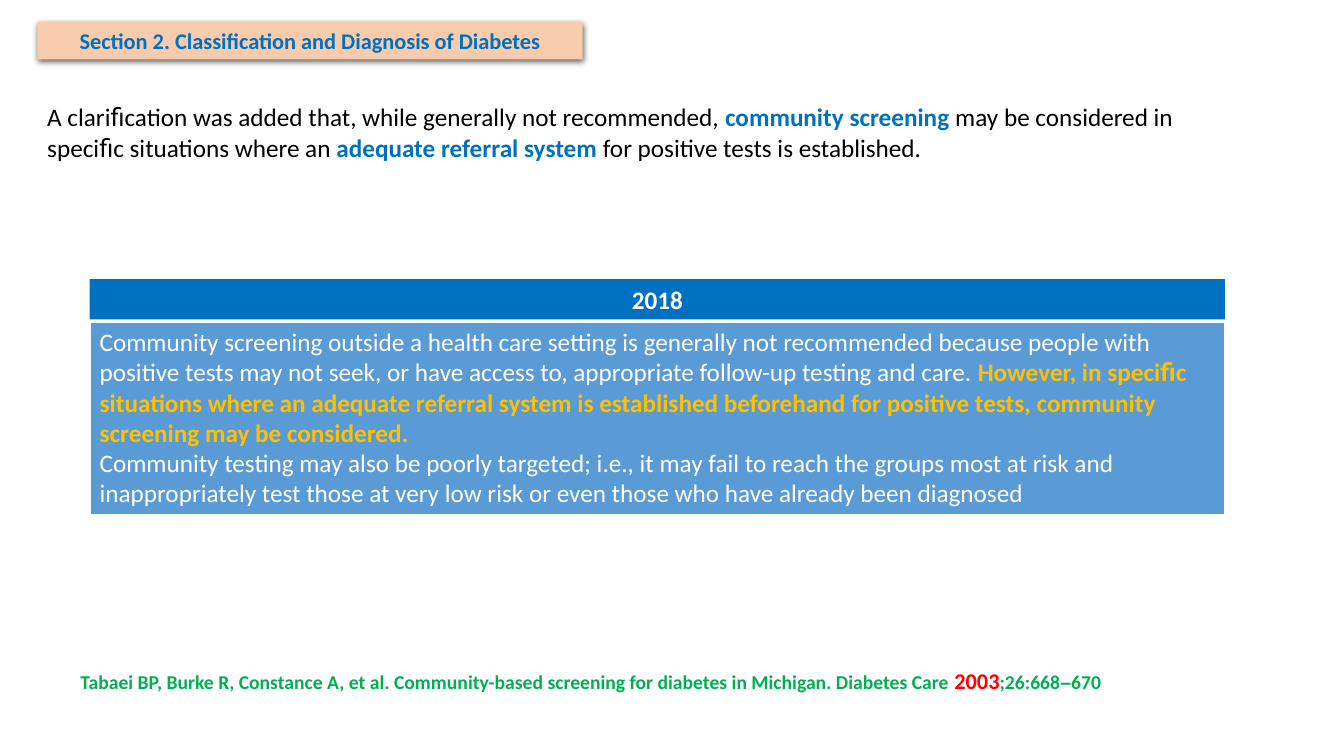
from dataclasses import dataclass
from typing import Optional

from lxml.etree import SubElement
from pptx import Presentation
from pptx.dml.color import RGBColor
from pptx.enum.shapes import MSO_SHAPE
from pptx.enum.text import MSO_ANCHOR, MSO_AUTO_SIZE, PP_ALIGN
from pptx.oxml.ns import qn
from pptx.shapes.autoshape import Shape
from pptx.text.text import Font, TextFrame
from pptx.util import Inches, Pt

COLORS = {
    "black": "000000",
    "white": "FFFFFF",
    "blue": "0070C0",
    "light blue": "5B9BD5",
    "peach": "F8CBAD",
    "gold": "FFC000",
    "green": "00B050",
    "red": "FF0000",
}


@dataclass(frozen=True)
class Span:
    """A stretch of text; settings left at None follow its paragraph."""
    text: str
    color: Optional[str] = None
    bold: Optional[bool] = None
    size: Optional[float] = None
    font: Optional[str] = None


@dataclass(frozen=True)
class Para:
    spans: tuple[Span, ...]
    color: str
    size: float = 18
    bold: bool = False
    align: PP_ALIGN = PP_ALIGN.LEFT


@dataclass(frozen=True)
class Box:
    left: float
    top: float
    width: float
    height: float
    paras: tuple[Para, ...]
    fill: Optional[str] = None
    outline: Optional[str] = None
    anchor: MSO_ANCHOR = MSO_ANCHOR.TOP


FI = Span("fi", font="Roboto")
GOLD_FI = Span("fi", "gold", True, font="Roboto")

SUMMARY = Box(0.37, 0.96, 11.91, 0.71, (Para((
    Span("A clari"), FI,
    Span("cation was added that, while generally not recommended, "),
    Span("community screening ", "blue", True),
    Span("may be considered in speci"), FI,
    Span("c situations where an "),
    Span("adequate referral system ", "blue", True),
    Span("for positive tests is established."),
), "black"),))

SECTION_TITLE = Box(0.37, 0.22, 5.41, 0.37, (Para((
    Span("Section 2. Classification and Diagnosis of Diabetes"),
), "blue", 16, True, PP_ALIGN.CENTER),), "peach", anchor=MSO_ANCHOR.MIDDLE)

GUIDANCE = Box(0.89, 3.19, 11.26, 1.92, (
    Para((
        Span("Community screening outside a health care setting is generally not "
             "recommended because people with positive tests may not seek, or have "
             "access to, appropriate follow-up testing and care. "),
        Span("However, in speci", "gold", True), GOLD_FI,
        Span("c situations where an adequate referral system is established "
             "beforehand for positive tests, community screening may be considered.",
             "gold", True),
    ), "white"),
    Para((
        Span("Community testing may also be poorly targeted; i.e., it may fail to "
             "reach the groups most at risk and inappropriately test those at very "
             "low risk or even those who have already been diagnosed"),
    ), "white"),
), "light blue", "white")

YEAR = Box(0.89, 2.77, 11.26, 0.4, (
    Para((Span("2018"),), "white", bold=True, align=PP_ALIGN.CENTER),), "blue")

CITATION = Box(0.7, 6.57, 11.93, 0.37, (Para((
    Span("Tabaei BP, Burke R, Constance A, et al. Community-based screening for "
         "diabetes in Michigan. Diabetes Care "),
    Span("2003", "red", size=16),
    Span(";26:668"),
    Span("–", font="Arial"),
    Span("670"),
), "green", 14, True),))


def rgb(color: str) -> RGBColor:
    return RGBColor.from_string(COLORS[color])


def style_font(font: Font, color: Optional[str], bold: Optional[bool],
               size: Optional[float], name: Optional[str]) -> None:
    if color:
        font.color.rgb = rgb(color)
    if bold is not None:
        font.bold = bold
    if size:
        font.size = Pt(size)
    if name:
        font.name = name


def write_text(frame: TextFrame, box: Box) -> None:
    frame.word_wrap = True
    frame.auto_size = MSO_AUTO_SIZE.SHAPE_TO_FIT_TEXT
    frame.vertical_anchor = box.anchor
    for index, para in enumerate(box.paras):
        paragraph = frame.add_paragraph() if index else frame.paragraphs[0]
        paragraph.alignment = para.align
        style_font(paragraph.font, para.color, para.bold, para.size, "Calibri")
        for span in para.spans:
            run = paragraph.add_run()
            run.text = span.text
            style_font(run.font, span.color, span.bold, span.size, span.font)


def draw_box(shapes, box: Box) -> Shape:
    """Draw a filled rectangle, or a text box where there is no fill."""
    place = [Inches(n) for n in (box.left, box.top, box.width, box.height)]
    if box.fill:
        shape = shapes.add_shape(MSO_SHAPE.RECTANGLE, *place)
        shape.shadow.inherit = False
        shape.fill.solid()
        shape.fill.fore_color.rgb = rgb(box.fill)
        if box.outline:
            shape.line.color.rgb = rgb(box.outline)
            shape.line.width = Pt(1.5)
        else:
            shape.line.fill.background()
    else:
        shape = shapes.add_textbox(*place)
    write_text(shape.text_frame, box)
    return shape


def add_drop_shadow(shape: Shape) -> None:
    effects = shape._element.spPr.find(qn("a:effectLst"))
    shadow = SubElement(effects, qn("a:outerShdw"), blurRad=str(Pt(4.5)),
                        dist=str(Pt(1.5)), dir="5400000", rotWithShape="0")
    tint = SubElement(shadow, qn("a:srgbClr"), val=COLORS["black"])
    SubElement(tint, qn("a:alpha"), val="63000")


def main() -> None:
    deck = Presentation()
    deck.slide_width, deck.slide_height = Inches(13.33), Inches(7.5)
    slide = deck.slides.add_slide(deck.slide_layouts[6])
    draw_box(slide.shapes, SUMMARY)
    add_drop_shadow(draw_box(slide.shapes, SECTION_TITLE))
    recommendation = slide.shapes.add_group_shape()
    for box in (GUIDANCE, YEAR):
        draw_box(recommendation.shapes, box)
    draw_box(slide.shapes, CITATION)
    deck.save("out.pptx")


if __name__ == "__main__":
    main()
